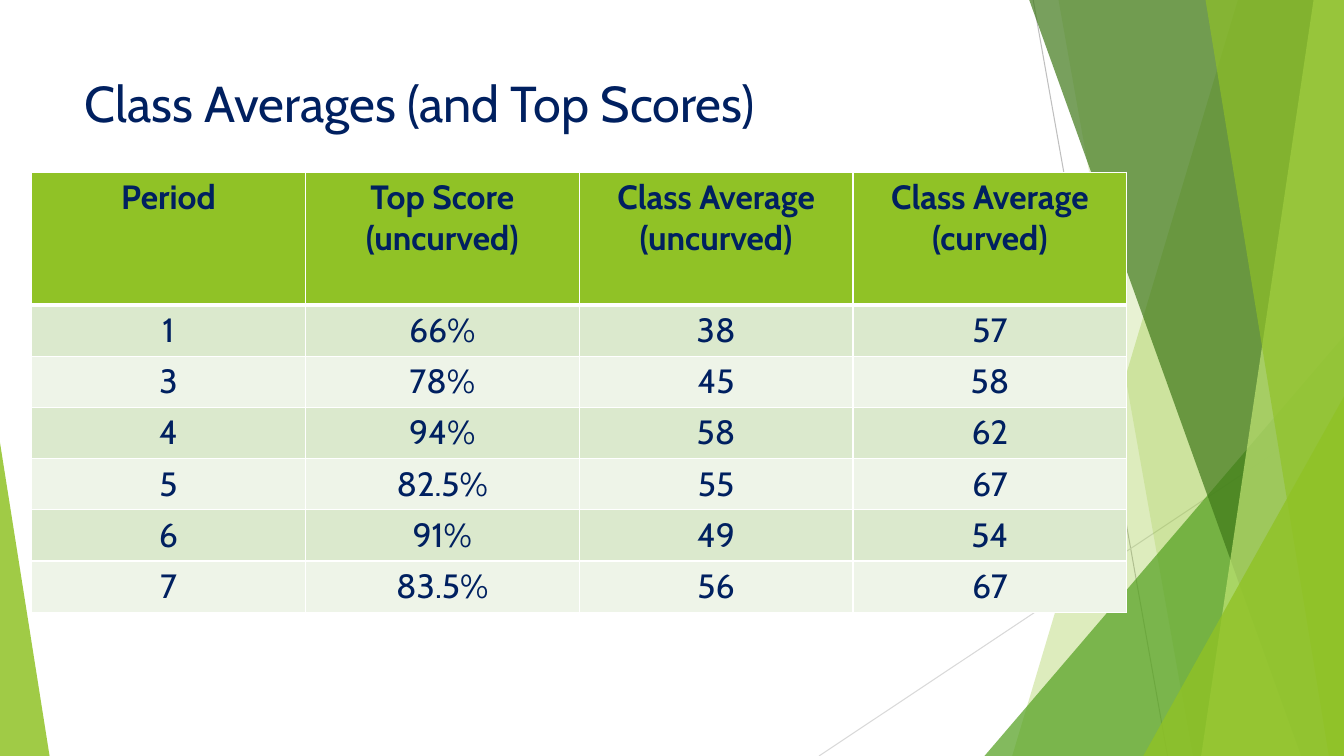
from lxml import etree
from pptx import Presentation
from pptx.dml.color import RGBColor
from pptx.enum.shapes import MSO_CONNECTOR, MSO_SHAPE
from pptx.enum.text import MSO_ANCHOR, PP_ALIGN
from pptx.oxml.ns import qn
from pptx.util import Inches, Pt

STRAIGHT = MSO_CONNECTOR.STRAIGHT
TRIANGLE = MSO_SHAPE.ISOSCELES_TRIANGLE
TOP = MSO_ANCHOR.TOP
LEFT, CENTER = PP_ALIGN.LEFT, PP_ALIGN.CENTER

NAVY = RGBColor(0x00, 0x20, 0x60)
WHITE = RGBColor(0xFF, 0xFF, 0xFF)
LIME = RGBColor(0x90, 0xC2, 0x26)
PALE_LIME = RGBColor(0xC0, 0xE4, 0x74)
GREEN = RGBColor(0x54, 0xA0, 0x21)
DARK_GREEN = RGBColor(0x3F, 0x78, 0x19)
ODD_ROW = RGBColor(0xDB, 0xE9, 0xCD)
EVEN_ROW = RGBColor(0xEE, 0xF4, 0xE8)
GRAY = RGBColor(0xBF, 0xBF, 0xBF)
LIGHT_GRAY = RGBColor(0xD9, 0xD9, 0xD9)

FONT = "Cabin"
COLUMNS, ROWS = 160, 90
CELLS_PER_INCH = 12

SCORES = [
    ["Period", "Top Score (uncurved)", "Class Average (uncurved)", "Class Average (curved)"],
    ["1", "66%", "38", "57"],
    ["3", "78%", "45", "58"],
    ["4", "94%", "58", "62"],
    ["5", "82.5%", "55", "67"],
    ["6", "91%", "49", "54"],
    ["7", "83.5%", "56", "67"],
]


def grid(cells):
    return Inches(cells / CELLS_PER_INCH)


def write(text_frame, text, size=24, color=NAVY, bold=False, align=LEFT):
    paragraph = text_frame.paragraphs[0]
    paragraph.alignment = align
    run = paragraph.add_run()
    run.text = text
    run.font.name = FONT
    run.font.size = Pt(size)
    run.font.bold = bold
    run.font.color.rgb = color


class FacetSlide:
    """Draws facets, lines, a title and a table on a grid of 160 by 90 cells."""

    def __init__(self, presentation):
        self.slide = presentation.slides.add_slide(presentation.slide_layouts[6])
        self.shapes = self.slide.shapes

    def line(self, start, end, color):
        connector = self.shapes.add_connector(STRAIGHT, *map(grid, start + end))
        connector.line.color.rgb = color
        connector.line.width = Pt(0.75)
        etree.SubElement(connector._element.spPr, qn("a:effectLst"))

    def paint(self, shape, color, opacity):
        shape.shadow.inherit = False
        shape.line.fill.background()
        shape.fill.solid()
        shape.fill.fore_color.rgb = color
        color_element = shape._element.spPr.find(qn("a:solidFill"))[0]
        etree.SubElement(color_element, qn("a:alpha"), val=str(opacity * 1000))

    def facet(self, top_column, bottom_column, color, opacity):
        builder = self.shapes.build_freeform(grid(top_column), grid(-0.1))
        corners = [(COLUMNS, -0.1), (COLUMNS, ROWS), (bottom_column, ROWS)]
        builder.add_line_segments([(grid(x), grid(y)) for x, y in corners])
        self.paint(builder.convert_to_shape(), color, opacity)

    def triangle(self, left, top, width, apex, color, opacity):
        box = (left, top, width, ROWS - top)
        shape = self.shapes.add_shape(TRIANGLE, *map(grid, box))
        shape.adjustments[0] = apex
        self.paint(shape, color, opacity)

    def title(self, text, box):
        text_frame = self.shapes.add_textbox(*map(grid, box)).text_frame
        text_frame.word_wrap = True
        text_frame.vertical_anchor = TOP
        write(text_frame, text, size=36)

    def border(self, cell, side, points):
        properties = cell._tc.get_or_add_tcPr()
        line = etree.SubElement(properties, qn(f"a:ln{side}"), w=str(Pt(points)))
        fill = etree.SubElement(line, qn("a:solidFill"))
        etree.SubElement(fill, qn("a:srgbClr"), val=str(WHITE))

    def table(self, rows, left, top, column_width, header_height, row_height):
        width = column_width * len(rows[0])
        height = header_height + row_height * (len(rows) - 1)
        frame = self.shapes.add_table(
            len(rows), len(rows[0]), *map(grid, (left, top, width, height)))
        table = frame.table
        table.horz_banding = False
        for column in table.columns:
            column.width = grid(column_width)
        for index, values in enumerate(rows):
            header = index == 0
            table.rows[index].height = grid(header_height if header else row_height)
            fill = LIME if header else ODD_ROW if index % 2 else EVEN_ROW
            widths = {"L": 1, "R": 1, "T": 3 if index == 1 else 1, "B": 3 if header else 1}
            for cell, value in zip(table.rows[index].cells, values):
                for side, points in widths.items():
                    self.border(cell, side, points)
                cell.fill.solid()
                cell.fill.fore_color.rgb = fill
                write(cell.text_frame, value, bold=header, align=CENTER)


def main():
    presentation = Presentation()
    presentation.slide_width = grid(COLUMNS)
    presentation.slide_height = grid(ROWS)
    slide = FacetSlide(presentation)

    slide.line((123, 0), (139, ROWS), GRAY)
    slide.line((COLUMNS, 48.4), (97.5, ROWS), LIGHT_GRAY)
    slide.facet(147.4, 120.5, LIME, 30)
    slide.facet(126, 142, LIME, 20)
    slide.triangle(117.2, 40, 42.8, 1, GREEN, 72)
    slide.facet(122.5, 154.9, DARK_GREEN, 70)
    slide.facet(156.4, 143, PALE_LIME, 70)
    slide.facet(143.5, 158.2, LIME, 65)
    slide.triangle(136.1, 47.2, 23.9, 1, LIME, 80)
    slide.triangle(0, 52.7, 5.9, 0, LIME, 85)

    slide.title("Class Averages (and Top Scores)", (8.9, 8, 112.8, 17.3))
    slide.table(SCORES, left=3.75, top=20.5, column_width=32.6,
                header_height=15.8, row_height=6.1)
    presentation.save("out.pptx")


if __name__ == "__main__":
    main()
